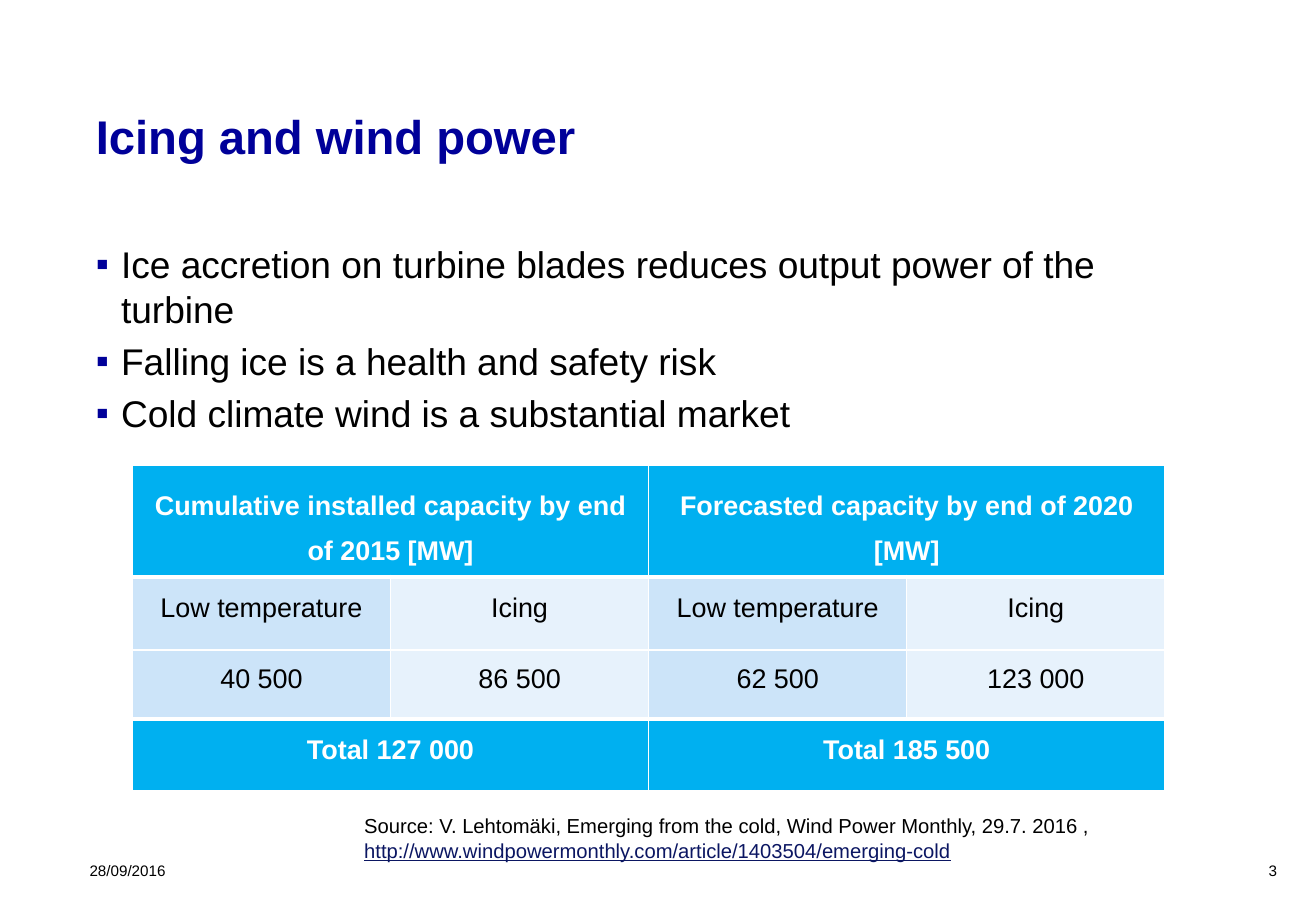
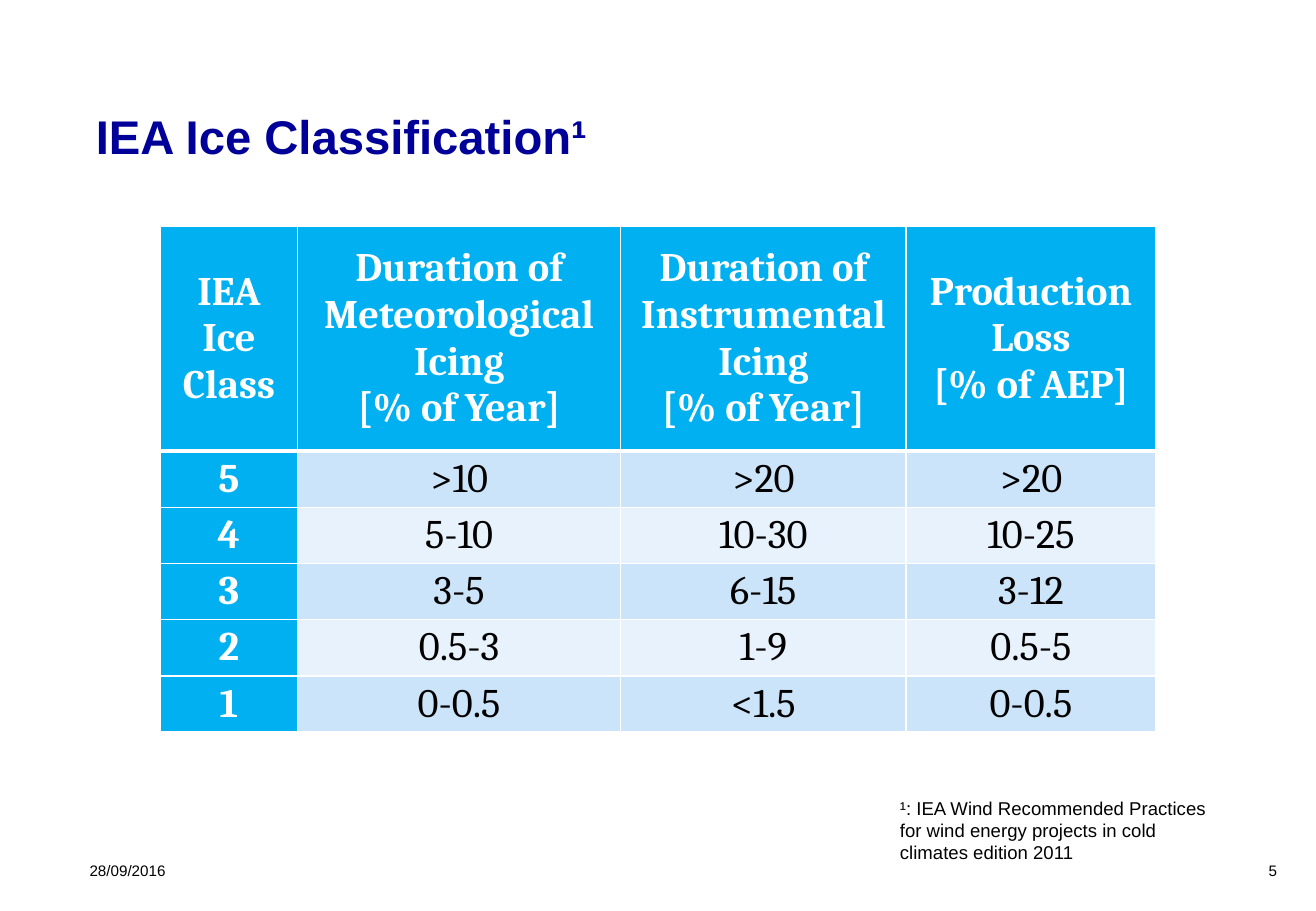
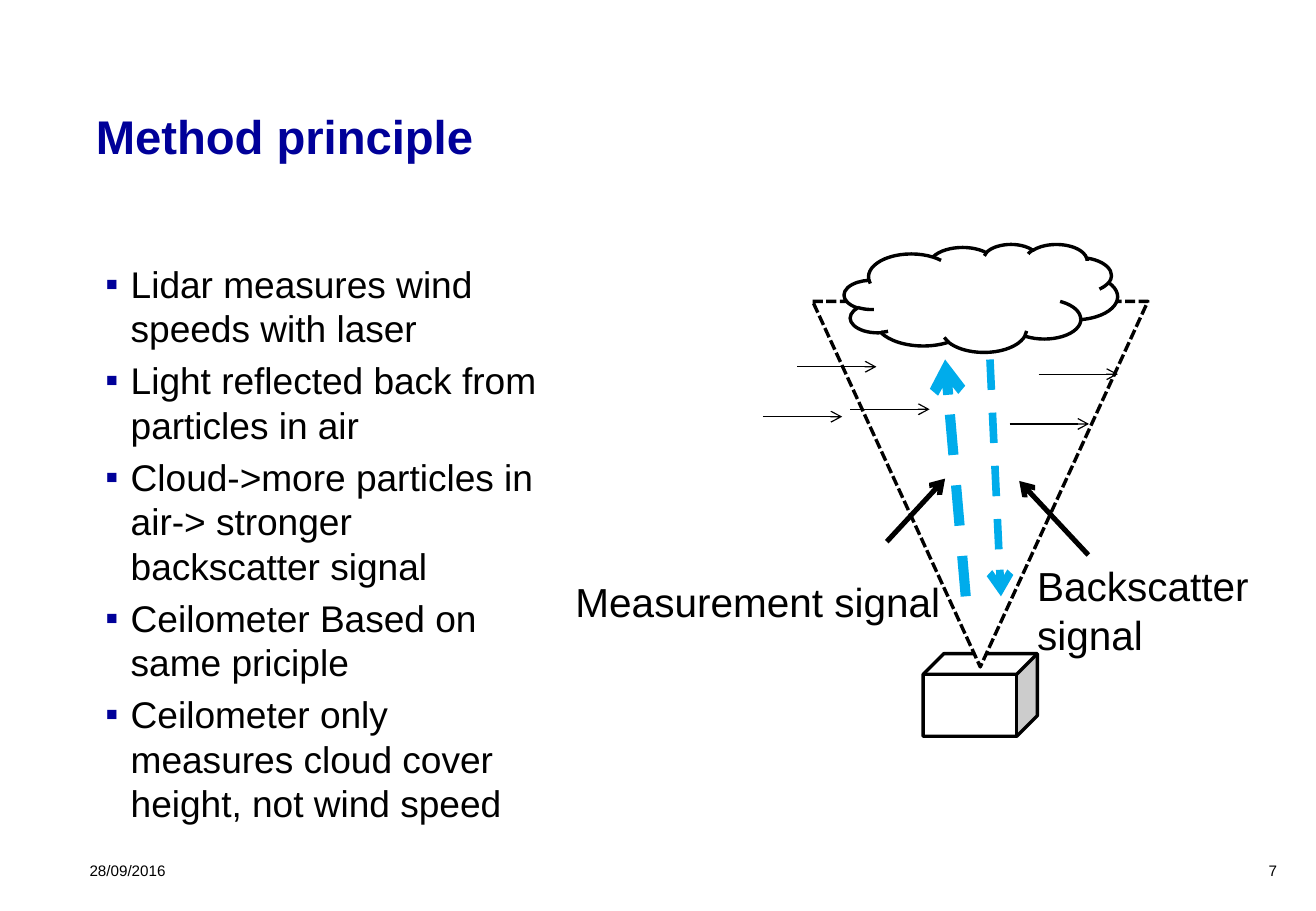
from dataclasses import dataclass
from typing import Optional, Sequence

from lxml.etree import SubElement
from pptx import Presentation
from pptx.dml.color import RGBColor
from pptx.enum.dml import MSO_LINE_DASH_STYLE as Dash
from pptx.enum.shapes import MSO_CONNECTOR as Connector, MSO_SHAPE as Preset
from pptx.enum.text import MSO_ANCHOR as Anchor, PP_ALIGN as Align
from pptx.oxml import parse_xml
from pptx.oxml.ns import nsdecls, qn
from pptx.slide import Slide
from pptx.text.text import TextFrame
from pptx.util import Pt

NAVY = RGBColor(0x00, 0x00, 0x99)
LINK = RGBColor(0x0B, 0x16, 0x62)
BLACK = RGBColor(0x00, 0x00, 0x00)
WHITE = RGBColor(0xFF, 0xFF, 0xFF)
SKY = RGBColor(0x00, 0xB0, 0xF0)
BEAM = RGBColor(0x00, 0xAC, 0xEB)
MID_TINT = RGBColor(0xCC, 0xE4, 0xF9)
PALE_TINT = RGBColor(0xE7, 0xF2, 0xFC)

SANS = "Arial"
SERIF = "Cambria"
DATE = "28/09/2016"
BULLET_INDENT = Pt(15)
FOOTER_TOP, FOOTER_WIDTH, FOOTER_HEIGHT = 501.8, 167.8, 28.8


@dataclass(frozen=True)
class Box:
    left: float
    top: float
    width: float
    height: float

    def lengths(self) -> tuple:
        return Pt(self.left), Pt(self.top), Pt(self.width), Pt(self.height)


@dataclass(frozen=True)
class TextStyle:
    size: float
    color: RGBColor = BLACK
    bold: bool = False
    font: str = SANS


@dataclass(frozen=True)
class CellLook:
    style: TextStyle
    fill: RGBColor
    line_spacing: Optional[float] = None  # a multiple of lines, or a Pt length
    before: float = 0
    after: float = 0


@dataclass(frozen=True)
class Arrow:
    start: tuple[float, float]
    end: tuple[float, float]
    weight: float
    color: RGBColor = BLACK
    dash: Optional[Dash] = None


@dataclass(frozen=True)
class Outline:
    preset: Preset
    box: Box
    dash: Optional[Dash] = None


TITLE = TextStyle(28, NAVY, bold=True)
BODY = TextStyle(22)
FOOTER = TextStyle(9)
SOURCE = TextStyle(12)
FOOTNOTE = TextStyle(11)
LABEL = TextStyle(24)


def format_runs(frame: TextFrame, style: TextStyle, align: Align = Align.LEFT) -> None:
    for paragraph in frame.paragraphs:
        paragraph.alignment = align
        for run in paragraph.runs:
            run.font.name = style.font
            run.font.size = Pt(style.size)
            run.font.bold = style.bold
            run.font.color.rgb = style.color


def add_text(slide: Slide, box: Box, text: str, style: TextStyle,
             align: Align = Align.LEFT, anchor: Anchor = Anchor.TOP,
             wrap: bool = True) -> TextFrame:
    frame = slide.shapes.add_textbox(*box.lengths()).text_frame
    frame.word_wrap = wrap
    frame.vertical_anchor = anchor
    frame.text = text
    format_runs(frame, style, align)
    return frame


def add_bullets(slide: Slide, box: Box, points: Sequence[str]) -> None:
    frame = add_text(slide, box, "\n".join(points), BODY)
    for index, paragraph in enumerate(frame.paragraphs):
        properties = paragraph._p.get_or_add_pPr()
        properties.set("marL", str(BULLET_INDENT))
        properties.set("indent", str(-BULLET_INDENT))
        color = SubElement(properties, qn("a:buClr"))
        SubElement(color, qn("a:srgbClr")).set("val", str(NAVY))
        SubElement(properties, qn("a:buFont")).set("typeface", SANS)
        SubElement(properties, qn("a:buChar")).set("char", "▪")
        if index:
            paragraph.space_before = Pt(0.2 * BODY.size)


def add_base_slide(deck: Presentation, title: str, number: int) -> Slide:
    """Add a slide with the shared title, date and page number."""
    slide = deck.slides.add_slide(deck.slide_layouts[6])
    for left, text, align in ((46, DATE, Align.LEFT), (596.2, str(number), Align.RIGHT)):
        footer_box = Box(left, FOOTER_TOP, FOOTER_WIDTH, FOOTER_HEIGHT)
        add_text(slide, footer_box, text, FOOTER, align, Anchor.MIDDLE)
    add_text(slide, Box(49.7, 60, 661, 74), title, TITLE)
    return slide


def add_grid(slide: Slide, left: float, top: float,
             widths: Sequence[float], heights: Sequence[float]):
    """Add a plain table with the given column widths and row heights."""
    box = Box(left, top, sum(widths), sum(heights))
    table = slide.shapes.add_table(len(heights), len(widths), *box.lengths()).table
    table.first_row = table.horz_banding = False
    for column, width in zip(table.columns, widths):
        column.width = Pt(width)
    for row, height in zip(table.rows, heights):
        row.height = Pt(height)
    return table


def fill_cell(cell, text: str, look: CellLook) -> None:
    cell.margin_left = cell.margin_right = Pt(5)
    cell.margin_top = cell.margin_bottom = 0
    cell.vertical_anchor = Anchor.MIDDLE
    cell.fill.solid()
    cell.fill.fore_color.rgb = look.fill
    cell.text_frame.text = text
    format_runs(cell.text_frame, look.style, Align.CENTER)
    for index, paragraph in enumerate(cell.text_frame.paragraphs):
        paragraph.line_spacing = look.line_spacing
        paragraph.space_before = Pt(look.before if index else 0)
        paragraph.space_after = Pt(look.after)


def rule_table(table, thick_edges: set[int]) -> None:
    """Draw white cell borders, heavier above the rows in thick_edges."""
    for row_index, row in enumerate(table.rows):
        top = 3 if row_index in thick_edges else 1
        bottom = 3 if row_index + 1 in thick_edges else 1
        borders = (("lnL", 1), ("lnR", 1), ("lnT", top), ("lnB", bottom))
        for cell in row.cells:
            properties = cell._tc.get_or_add_tcPr()
            for position, (tag, weight) in enumerate(borders):
                properties.insert(position, parse_xml(
                    f'<a:{tag} {nsdecls("a")} w="{Pt(weight)}"><a:solidFill>'
                    f'<a:srgbClr val="{WHITE}"/></a:solidFill></a:{tag}>'))


def add_outline(slide: Slide, outline: Outline) -> None:
    shape = slide.shapes.add_shape(outline.preset, *outline.box.lengths())
    shape.shadow.inherit = False
    shape.fill.solid()
    shape.fill.fore_color.rgb = WHITE
    shape.line.color.rgb = BLACK
    shape.line.width = Pt(2)
    if outline.dash:
        shape.line.dash_style = outline.dash


def add_arrow(slide: Slide, arrow: Arrow) -> None:
    ends = [Pt(value) for value in (*arrow.start, *arrow.end)]
    connector = slide.shapes.add_connector(Connector.STRAIGHT, *ends)
    connector.line.color.rgb = arrow.color
    connector.line.width = Pt(arrow.weight)
    if arrow.dash:
        connector.line.dash_style = arrow.dash
    properties = connector._element.spPr
    SubElement(properties.find(qn("a:ln")), qn("a:tailEnd")).set("type", "arrow")
    SubElement(properties, qn("a:effectLst"))


def add_icing_slide(deck: Presentation) -> None:
    slide = add_base_slide(deck, "Icing and wind power", 3)
    add_bullets(slide, Box(49.7, 139.7, 661, 323), (
        "Ice accretion on turbine blades reduces output power of the turbine",
        "Falling ice is a health and safety risk",
        "Cold climate wind is a substantial market",
    ))

    capacity = add_grid(slide, 78.5, 275.8, [153] * 4, [66.2, 43.2, 41, 42.5])
    strong = TextStyle(16, WHITE, bold=True)
    header = CellLook(strong, SKY, 1.5, 2, 6)
    total = CellLook(strong, SKY, Pt(12), 2, 6)
    plain = [CellLook(TextStyle(16), fill, Pt(12), 2, 6) for fill in (MID_TINT, PALE_TINT)]
    spanning_rows = (
        (0, header, ("Cumulative installed capacity by end of 2015 [MW]",
                     "Forecasted capacity by end of 2020 [MW]")),
        (3, total, ("Total 127 000", "Total 185 500")),
    )
    for row, look, texts in spanning_rows:
        for half, text in enumerate(texts):
            first = capacity.cell(row, 2 * half)
            first.merge(capacity.cell(row, 2 * half + 1))
            fill_cell(first, text, look)
    value_rows = (
        ("Low temperature", "Icing", "Low temperature", "Icing"),
        ("40 500", "86 500", "62 500", "123 000"),
    )
    for row, texts in enumerate(value_rows, start=1):
        for column, text in enumerate(texts):
            fill_cell(capacity.cell(row, column), text, plain[column % 2])
    rule_table(capacity, {1, 3})

    source = add_text(
        slide, Box(208.8, 478.8, 535, 51),
        "Source: V. Lehtomäki, Emerging from the cold, Wind Power Monthly, 29.7. 2016 , ",
        SOURCE)
    address = source.paragraphs[0].add_run()
    address.text = "http://www.windpowermonthly.com/article/1403504/emerging-cold"
    format_runs(source, SOURCE)
    address.font.color.rgb = LINK
    address.font.underline = True


def add_classification_slide(deck: Presentation) -> None:
    slide = add_base_slide(deck, "IEA Ice Classification¹", 5)
    classes = add_grid(slide, 95, 134, [81.4, 191.5, 169.2, 148], [133.5] + [33.3] * 5)
    strong = CellLook(TextStyle(24, WHITE, bold=True, font=SERIF), SKY)
    plain = [CellLook(TextStyle(24, font=SERIF), fill) for fill in (PALE_TINT, MID_TINT)]
    rows = (
        ("IEA Ice Class", "Duration of\nMeteorological\nIcing\n[% of Year]",
         "Duration of\nInstrumental\nIcing\n[% of Year]", "Production\nLoss\n[% of AEP]"),
        ("5", ">10", ">20", ">20"),
        ("4", "5-10", "10-30", "10-25"),
        ("3", "3-5", "6-15", "3-12"),
        ("2", "0.5-3", "1-9", "0.5-5"),
        ("1", "0-0.5", "<1.5", "0-0.5"),
    )
    for row, texts in enumerate(rows):
        for column, text in enumerate(texts):
            is_heading = row == 0 or column == 0
            fill_cell(classes.cell(row, column), text, strong if is_heading else plain[row % 2])
    rule_table(classes, {1})
    add_text(slide, Box(526.3, 468.7, 198.7, 47.5),
             "¹: IEA Wind Recommended Practices for wind energy projects in cold "
             "climates edition 2011", FOOTNOTE)


def add_method_slide(deck: Presentation) -> None:
    slide = add_base_slide(deck, "Method principle", 7)
    add_bullets(slide, Box(55.4, 151.2, 278, 317.5), (
        "Lidar measures wind speeds with laser",
        "Light reflected back from particles in air",
        "Cloud->more particles in air-> stronger backscatter signal",
        "Ceilometer Based on same priciple",
        "Ceilometer only measures cloud cover height, not wind speed",
    ))

    lidar = Outline(Preset.CUBE, Box(547.2, 387.4, 67.7, 49))
    scan_cone = Outline(Preset.FLOWCHART_MERGE, Box(481.7, 178.6, 198.7, 216.7),
                        Dash.SQUARE_DOT)
    cloud = Outline(Preset.CLOUD, Box(500.4, 144.7, 162, 64))
    add_outline(slide, lidar)
    add_outline(slide, scan_cone)

    wind_starts = ((452.2, 247), (504, 242.6), (598.5, 251.3), (615.6, 221.8), (472.5, 217.4))
    for x, y in wind_starts:
        add_arrow(slide, Arrow((x, y), (x + 47, y), 0.75))
    signal_arrows = (
        Arrow((572.4, 353.5), (560.2, 213.1), 6, BEAM, Dash.DASH),
        Arrow((586.8, 213.1), (593.3, 353.5), 4.5, BEAM, Dash.DASH),
        Arrow((525.6, 321.1), (560.2, 283.7), 3),
        Arrow((645.1, 329), (604.1, 285.1), 3),
    )
    for arrow in signal_arrows:
        add_arrow(slide, arrow)

    add_text(slide, Box(334, 338.4, 231, 35.3), "Measurement signal", LABEL, wrap=False)
    add_text(slide, Box(607.7, 329, 147, 64), "Backscatter signal", LABEL)
    add_outline(slide, cloud)


def main() -> None:
    deck = Presentation()
    deck.slide_width, deck.slide_height = Pt(780), Pt(540)
    add_icing_slide(deck)
    add_classification_slide(deck)
    add_method_slide(deck)
    deck.save("out.pptx")


if __name__ == "__main__":
    main()
